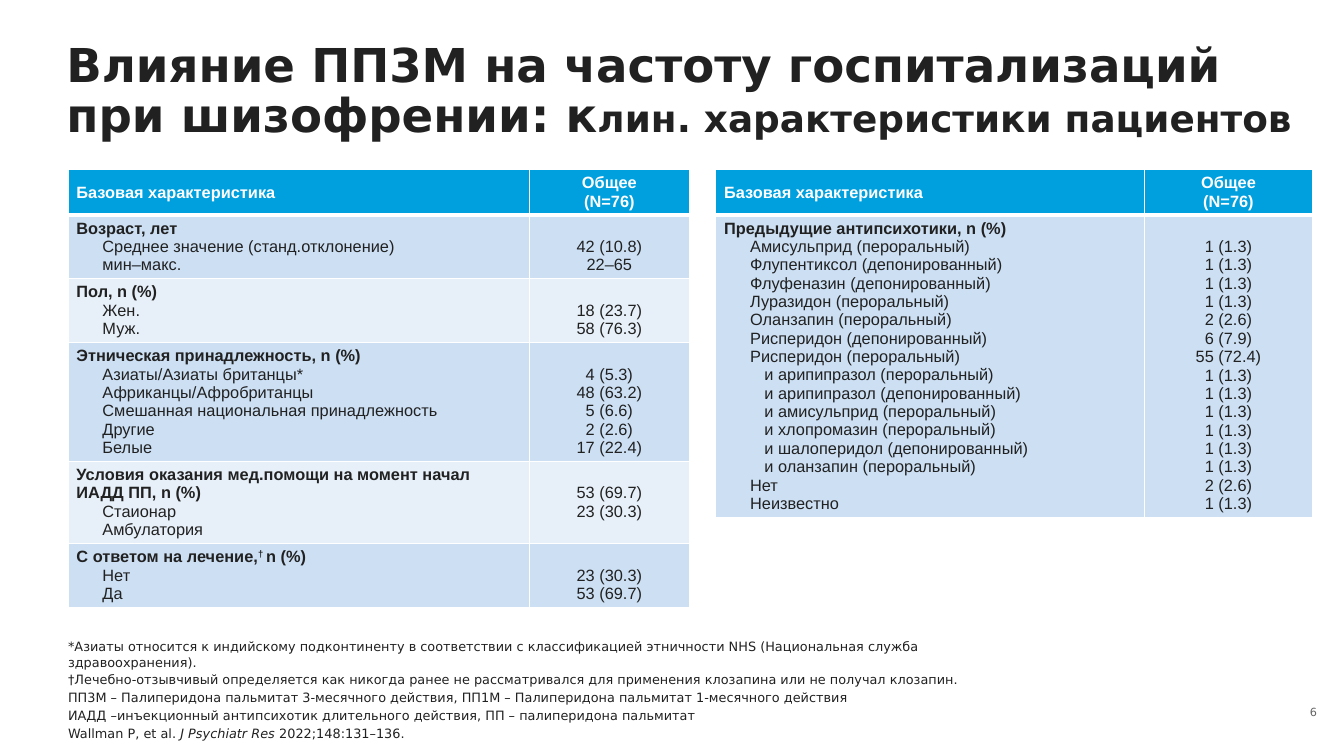
"""Build a slide with two tables of baseline patient characteristics."""
from lxml import etree
from pptx import Presentation, util as u
from pptx.dml.color import RGBColor
from pptx.enum import text
from pptx.oxml import ns

INK = RGBColor(0x21, 0x21, 0x21)
GREY = RGBColor(0x64, 0x64, 0x64)
WHITE = RGBColor(0xFF, 0xFF, 0xFF)
HEADER = RGBColor(0x00, 0xA0, 0xDF)
BANDS = RGBColor(0xCC, 0xDF, 0xF3), RGBColor(0xE7, 0xF0, 0xF9)
HEADINGS = "Базовая характеристика", "Общее\v(N=76)"
LINE, INDENT, SUBINDENT = 0.22, 0.31, 0.48
DEEPER = "и "

DEMOGRAPHICS = [
    ([("Возраст, лет", {})],
     ["Среднее значение (станд.отклонение)", "мин–макс."],
     ["42 (10.8)", "22–65"]),
    ([("Пол, n (%)", {})], ["Жен.", "Муж."], ["18 (23.7)", "58 (76.3)"]),
    ([("Этническая принадлежность, n (%)", {})],
     ["Азиаты/Азиаты британцы*", "Африканцы/Афробританцы",
      "Смешанная национальная принадлежность", "Другие", "Белые"],
     ["4 (5.3)", "48 (63.2)", "5 (6.6)", "2 (2.6)", "17 (22.4)"]),
    ([("Условия оказания мед.помощи на момент начал ИАДД ПП, n (%)", {})],
     ["Стаионар", "Амбулатория"], ["53 (69.7)", "23 (30.3)"]),
    ([("С ответом на лечение,", {}), ("† ", {"baseline": 30}), ("n (%)", {})],
     ["Нет", "Да"], ["23 (30.3)", "53 (69.7)"]),
]
ANTIPSYCHOTICS = [
    ([("Предыдущие антипсихотики, n (%)", {})],
     ["Амисульприд (пероральный)", "Флупентиксол (депонированный)",
      "Флуфеназин (депонированный)", "Луразидон (пероральный)",
      "Оланзапин (пероральный)", "Рисперидон (депонированный)",
      "Рисперидон (пероральный)", "и арипипразол (пероральный)",
      "и арипипразол (депонированный)", "и амисульприд (пероральный)",
      "и хлопромазин (пероральный)", "и шалоперидол (депонированный)",
      "и оланзапин (пероральный)", "Нет", "Неизвестно"],
     ["1 (1.3)"] * 4 + ["2 (2.6)", "6 (7.9)", "55 (72.4)"]
     + ["1 (1.3)"] * 6 + ["2 (2.6)", "1 (1.3)"]),
]
FOOTNOTES = [
    [("*Азиаты относится к индийскому подконтиненту в соответствии с "
      "классификацией этничности NHS (Национальная служба здравоохранения).", {})],
    [("†Лечебно-отзывчивый определяется как никогда ранее не рассматривался "
      "для применения клозапина или не получал клозапин.", {})],
    [("ПП3М – Палиперидона пальмитат 3-месячного действия, "
      "ПП1М – Палиперидона пальмитат 1-месячного действия", {})],
    [("ИАДД –инъекционный антипсихотик длительного действия, "
      "ПП – палиперидона пальмитат", {})],
    [("Wallman P, et al. ", {}), ("J Psychiatr Res ", {"italic": True}),
     ("2022;148:131–136.", {})],
]


def write(paragraph, content, size=14, name="Arial", color=INK, bold=False,
          italic=False, baseline=0):
    """Add formatted text to a paragraph; a vertical tab breaks the line."""
    for number, line in enumerate(content.split("\v")):
        if number:
            paragraph.add_line_break()
        run = paragraph.add_run()
        run.text = line
        font = run.font
        font.size, font.name, font.bold, font.italic = u.Pt(size), name, bold, italic
        font.color.rgb = color
        if baseline:
            run._r.get_or_add_rPr().set("baseline", str(baseline * 1000))


def next_paragraph(frame):
    """Return the empty first paragraph, or a new one."""
    first = frame.paragraphs[0]
    return frame.add_paragraph() if first.runs else first


class PatientSlide:
    """Hold the slide and its style, and add its elements."""

    font = "DejaVu Sans"

    def __init__(self, presentation):
        self.slide = presentation.slides.add_slide(presentation.slide_layouts[5])

    def title(self, parts, left, top, width, height):
        """Fill and place the title placeholder."""
        shape = self.slide.shapes.title
        shape.left, shape.top = u.Inches(left), u.Inches(top)
        shape.width, shape.height = u.Inches(width), u.Inches(height)
        frame = self.clean_frame(shape, text.MSO_ANCHOR.TOP)
        paragraph = frame.paragraphs[0]
        paragraph.alignment = text.PP_ALIGN.LEFT
        paragraph.line_spacing = 0.9
        for content, size in parts:
            write(paragraph, content, size=size, name=self.font, bold=True)

    def clean_frame(self, shape, anchor):
        """Return a wrapping text frame without margins."""
        frame = shape.text_frame
        frame.word_wrap = True
        frame.auto_size = text.MSO_AUTO_SIZE.NONE
        frame.vertical_anchor = anchor
        frame.margin_left = frame.margin_right = 0
        frame.margin_top = frame.margin_bottom = 0
        return frame

    def textbox(self, paragraphs, left, top, width, height, size, color=INK,
                anchor=text.MSO_ANCHOR.BOTTOM, align=text.PP_ALIGN.LEFT):
        """Add a text box with one list of runs per paragraph."""
        shape = self.slide.shapes.add_textbox(
            u.Inches(left), u.Inches(top), u.Inches(width), u.Inches(height))
        frame = self.clean_frame(shape, anchor)
        for number, runs in enumerate(paragraphs):
            paragraph = next_paragraph(frame)
            paragraph.alignment = align
            paragraph.space_before = u.Pt(2 if number else 0)
            for content, style in runs:
                write(paragraph, content, size=size, name=self.font, color=color, **style)

    def paint(self, cell, fill, bottom=1):
        """Set the white borders and the fill of a cell."""
        properties = cell._tc.get_or_add_tcPr()
        for side, points in zip("LRTB", (1, 1, 1, bottom)):
            line = etree.SubElement(properties, ns.qn(f"a:ln{side}"), w=str(u.Pt(points)))
            solid = etree.SubElement(line, ns.qn("a:solidFill"))
            etree.SubElement(solid, ns.qn("a:srgbClr"), val=str(WHITE))
        cell.fill.solid()
        cell.fill.fore_color.rgb = fill

    def table(self, groups, left, top, widths, heights):
        """Add a table with a header and one row per group."""
        table = self.slide.shapes.add_table(
            len(groups) + 1, 2, u.Inches(left), u.Inches(top),
            u.Inches(sum(widths)), u.Inches(sum(heights))).table
        table.horz_banding = False
        for column, width in zip(table.columns, widths):
            column.width = u.Inches(width)
        for row, height in zip(table.rows, heights):
            row.height = u.Inches(height)
        for column, heading in enumerate(HEADINGS):
            cell = table.cell(0, column)
            self.paint(cell, HEADER, bottom=3)
            cell.vertical_anchor = text.MSO_ANCHOR.MIDDLE
            paragraph = cell.text_frame.paragraphs[0]
            paragraph.alignment = text.PP_ALIGN.CENTER if column else text.PP_ALIGN.LEFT
            write(paragraph, heading, color=WHITE, bold=True)
        for row, group in enumerate(groups, 1):
            self.group(table.cell(row, 0), table.cell(row, 1), group, BANDS[(row - 1) % 2])

    def group(self, label_cell, value_cell, group, fill):
        """Fill one row with a heading, its items and their values."""
        heading, items, values = group
        self.paint(label_cell, fill)
        self.paint(value_cell, fill)
        value_cell.margin_top = u.Inches(0.05 + LINE)
        for content, style in heading:
            write(label_cell.text_frame.paragraphs[0], content, bold=True, **style)
        for item, value in zip(items, values):
            paragraph = next_paragraph(label_cell.text_frame)
            indent = SUBINDENT if item.startswith(DEEPER) else INDENT
            paragraph._p.get_or_add_pPr().set("marL", str(u.Inches(indent)))
            write(paragraph, item)
            paragraph = next_paragraph(value_cell.text_frame)
            paragraph.alignment = text.PP_ALIGN.CENTER
            write(paragraph, value)


def main():
    """Build and save the presentation."""
    presentation = Presentation()
    presentation.slide_width, presentation.slide_height = u.Inches(16), u.Inches(9)
    page = PatientSlide(presentation)
    page.title([("Влияние ПП3М на частоту госпитализаций при шизофрении: к", 40),
                ("лин. характеристики пациентов", 32)], 0.79, 0.5, 14.62, 1.36)
    page.table(DEMOGRAPHICS, 0.81, 2.02, (5.49, 1.91),
               (0.54, 0.76, 0.76, 1.4, 0.98, 0.76))
    page.table(ANTIPSYCHOTICS, 8.52, 2.02, (5.11, 1.99), (0.54, 3.6))
    page.textbox(FOOTNOTES, 0.81, 7.72, 11.49, 1.1, 11)
    page.textbox([[("6", {})]], 15.28, 8.26, 0.4, 0.44, 9.6, GREY,
                 text.MSO_ANCHOR.MIDDLE, text.PP_ALIGN.RIGHT)
    presentation.save("out.pptx")


if __name__ == "__main__":
    main()
